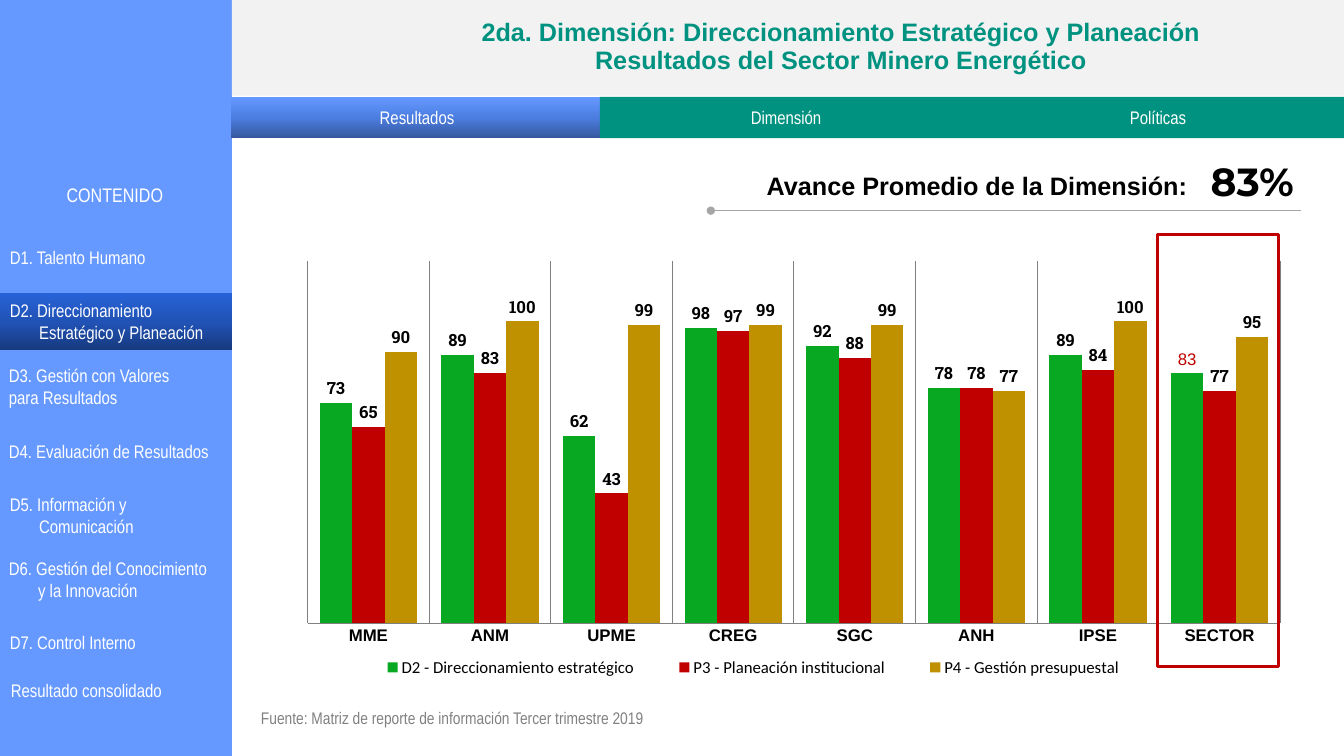
from lxml import etree
from copy import deepcopy
from pptx import Presentation
from pptx.chart.data import CategoryChartData
from pptx.dml.color import RGBColor
from pptx.enum.chart import XL_CHART_TYPE as CHART, XL_LABEL_POSITION as LABEL
from pptx.enum.chart import XL_LEGEND_POSITION as LEGEND, XL_TICK_MARK as TICK
from pptx.enum.shapes import MSO_CONNECTOR as CONNECTOR, MSO_SHAPE as SHAPE
from pptx.enum.text import MSO_ANCHOR as ANCHOR, MSO_AUTO_SIZE as AUTO, PP_ALIGN as ALIGN
from pptx.oxml.ns import qn
from pptx.util import Pt

SCALE = 9144
WHITE = RGBColor(0xFF, 0xFF, 0xFF)
BLACK = RGBColor(0, 0, 0)
BLUE = RGBColor(0x66, 0x99, 0xFF)
PALE = RGBColor(0xF2, 0xF2, 0xF2)
TEAL = RGBColor(0x00, 0x92, 0x80)
GREY = RGBColor(0x80, 0x80, 0x80)
LINE_GREY = RGBColor(0xA6, 0xA6, 0xA6)
GREEN = RGBColor(0x08, 0xA8, 0x23)
RED = RGBColor(0xC0, 0, 0)
GOLD = RGBColor(0xBF, 0x90, 0)
TAB_BLUES = [RGBColor(0x36, 0x58, 0x9E), RGBColor(0x4C, 0x7E, 0xE1), BLUE]
MENU_BLUES = [RGBColor(0x17, 0x3A, 0x80), RGBColor(0x21, 0x53, 0xB6), RGBColor(0x28, 0x62, 0xD7)]
NARROW = "Arial Narrow"

ENTITIES = ["MME", "ANM", "UPME", "CREG", "SGC", "ANH", "IPSE", "SECTOR"]
SERIES = [
    ("D2 - Direccionamiento estratégico", [73, 89, 62, 98, 92, 78, 89, 83], GREEN),
    ("P3 - Planeación institucional", [65, 83, 43, 97, 88, 78, 84, 77], RED),
    ("P4 - Gestión presupuestal", [90, 100, 99, 99, 99, 77, 100, 95], GOLD),
]
MENU = [
    (0, 227, ["D1. Talento Humano"], [(0, 0)]),
    (0, 291, ["D2. Direccionamiento Estratégico y Planeación"], [(29, -29)]),
    (-1, 355, ["D3. Gestión con Valores", "para Resultados"], [(29, -29), (29, -29)]),
    (-1, 420, ["D4. Evaluación de Resultados"], [(29, -29)]),
    (0, 483, ["D5. Información y Comunicación"], [(29, -29)]),
    (-1, 547, ["D6. Gestión del Conocimiento", "y la Innovación"], [(29, -29), (29, 0)]),
    (0, 609, ["D7. Control Interno"], [(29, -29)]),
    (1, 657, ["Resultado consolidado"], [(0, 0)]),
]
TABS = [("Resultados", 229), ("Dimensión", 595), ("Políticas", 964)]


def px(*values):
    return [v * SCALE for v in values]


def set_font(font, size, color, name, bold=False):
    font.size, font.name, font.bold = Pt(size), name, bold
    font.color.rgb = color


def write(sp, lines, size, color=WHITE, name=NARROW, bold=False,
          align=ALIGN.LEFT, anchor=ANCHOR.MIDDLE, indents=(), spacing=None):
    tf = sp.text_frame
    tf.word_wrap = True
    tf.auto_size = AUTO.NONE
    tf.vertical_anchor = anchor
    for i, line in enumerate(lines):
        p = tf.add_paragraph() if i else tf.paragraphs[0]
        p.alignment = align
        if spacing:
            p.line_spacing = spacing
        if indents:
            left, first = px(*indents[i])
            pPr = p._p.get_or_add_pPr()
            pPr.set("marL", str(left))
            pPr.set("indent", str(first))
        r = p.add_run()
        r.text = line
        set_font(r.font, size, color, name, bold)


def add_box(s, box, fill=None, line=None, width=1, kind=SHAPE.RECTANGLE):
    sp = s.shapes.add_shape(kind, *px(*box))
    sp.shadow.inherit = False
    if isinstance(fill, list):
        fill_gradient(sp, fill)
    elif fill is not None:
        sp.fill.solid()
        sp.fill.fore_color.rgb = fill
    else:
        sp.fill.background()
    if line is not None:
        sp.line.color.rgb = line
        sp.line.width = Pt(width)
    else:
        sp.line.fill.background()
    return sp


def fill_gradient(sp, colors):
    sp.fill.gradient()
    sp.fill.gradient_angle = 90
    stops = sp.element.find(".//" + qn("a:gsLst"))
    stops.append(deepcopy(stops[0]))
    for i, (stop, color) in enumerate(zip(sp.fill.gradient_stops, colors)):
        stop.color.rgb = color
        stop.position = i / 2


def add_text(s, box, lines, size, **style):
    write(s.shapes.add_textbox(*px(*box)), lines, size, **style)


def add_rule(s, x1, x2, y):
    line = s.shapes.add_connector(CONNECTOR.STRAIGHT, *px(x1, y, x2, y))
    line.line.color.rgb = LINE_GREY
    line.line.width = Pt(0.5)
    spPr = line.element.spPr
    etree.SubElement(spPr.find(qn("a:ln")), qn("a:headEnd"), type="oval")
    etree.SubElement(spPr, qn("a:effectLst"))


def set_layout(parent, index, target, *box):
    for old in parent.findall(qn("c:layout")):
        parent.remove(old)
    layout = etree.Element(qn("c:layout"))
    manual = etree.SubElement(layout, qn("c:manualLayout"))
    pairs = [("layoutTarget", target)] if target else []
    pairs += [("xMode", "edge"), ("yMode", "edge"), *zip("xywh", box)]
    for tag, value in pairs:
        etree.SubElement(manual, qn("c:" + tag), val=str(value))
    parent.insert(index, layout)


def format_axes(chart):
    cat, val = chart.category_axis, chart.value_axis
    cat.major_tick_mark = TICK.NONE
    cat.has_major_gridlines = True
    for line in (cat.format.line, cat.major_gridlines.format.line):
        line.color.rgb = GREY
        line.width = Pt(0.75)
    set_font(cat.tick_labels.font, 12, BLACK, "Arial", True)
    val.minimum_scale, val.maximum_scale = 0, 120
    val.has_major_gridlines = False
    val.visible = False


def add_results_chart(s, box):
    data = CategoryChartData(number_format="0")
    data.categories = ENTITIES
    for name, values, _ in SERIES:
        data.add_series(name, values)
    chart = s.shapes.add_chart(CHART.COLUMN_CLUSTERED, *px(*box), data).chart
    set_font(chart.font, 10, BLACK, "Calibri")
    chart.has_title = False
    format_axes(chart)
    plot = chart.plots[0]
    plot.gap_width, plot.overlap, plot.vary_by_categories = 75, 0, False
    for series, (_, _, color) in zip(plot.series, SERIES):
        series.format.fill.solid()
        series.format.fill.fore_color.rgb = color
        labels = series.data_labels
        labels.show_value = True
        labels.number_format, labels.number_format_is_linked = "0", False
        labels.position = LABEL.OUTSIDE_END
        set_font(labels.font, 12, BLACK, "Roboto Slab", True)
    sector = plot.series[0].points[len(ENTITIES) - 1].data_label
    set_font(sector.font, 12, RED, "Arial")
    sector.position = LABEL.OUTSIDE_END
    chart.has_legend = True
    chart.legend.position = LEGEND.BOTTOM
    chart.legend.include_in_layout = False
    set_font(chart.legend.font, 12, BLACK, "Calibri")
    root = chart.element
    set_layout(root.find(".//" + qn("c:plotArea")), 0, "inner", 0.02, 0.03, 0.96, 0.82)
    set_layout(root.find(".//" + qn("c:legend")), 1, None, 0.06, 0.91, 0.8, 0.08)


def add_header(s):
    band = add_box(s, (230, 0, 1103, 95), PALE)
    title = s.shapes.title
    title.left, title.top, title.width, title.height = px(355, 25, 958, 54)
    write(title, ["2da. Dimensión: Direccionamiento Estratégico y Planeación",
                  "Resultados del Sector Minero Energético"], 18, color=TEAL, name="Arial",
          bold=True, align=ALIGN.CENTER, anchor=ANCHOR.BOTTOM, spacing=0.9)
    band.element.addnext(title.element)


def main():
    prs = Presentation()
    prs.slide_width, prs.slide_height = px(1333, 750)
    s = prs.slides.add_slide(prs.slide_layouts[5])
    add_results_chart(s, (285, 246, 1005, 438))
    add_box(s, (0, 0, 230, 750), BLUE)
    heading = add_box(s, (-1, 171, 230, 44), kind=SHAPE.ROUNDED_RECTANGLE)
    write(heading, ["CONTENIDO"], 14, align=ALIGN.CENTER)
    add_header(s)
    add_text(s, (737, 164, 464, 40), ["Avance Promedio de la Dimensión:"], 18, color=BLACK,
             name="Arial", bold=True, align=ALIGN.CENTER, anchor=ANCHOR.TOP)
    average = add_box(s, (1182, 151, 120, 57), line=WHITE)
    write(average, ["83%"], 28, color=BLACK, name="Montserrat", bold=True, align=ALIGN.CENTER)
    add_rule(s, 705, 1290, 209)
    add_text(s, (249, 698, 614, 28),
             ["Fuente: Matriz de reporte de información Tercer trimestre 2019"], 12, color=GREY)
    add_box(s, (1148, 233, 120, 428), line=RED, width=2.25)
    for i, (label, x) in enumerate(TABS):
        tab = add_box(s, (x, 96, 369, 41), TEAL if i else TAB_BLUES)
        write(tab, [label], 13, align=ALIGN.CENTER)
    for i, (x, y, lines, indents) in enumerate(MENU):
        box = (x, y, 230, 56)
        if i == 1:
            write(add_box(s, box, MENU_BLUES), lines, 13, indents=indents)
        else:
            add_text(s, box, lines, 13, indents=indents)
    prs.save("out.pptx")


if __name__ == "__main__":
    main()
